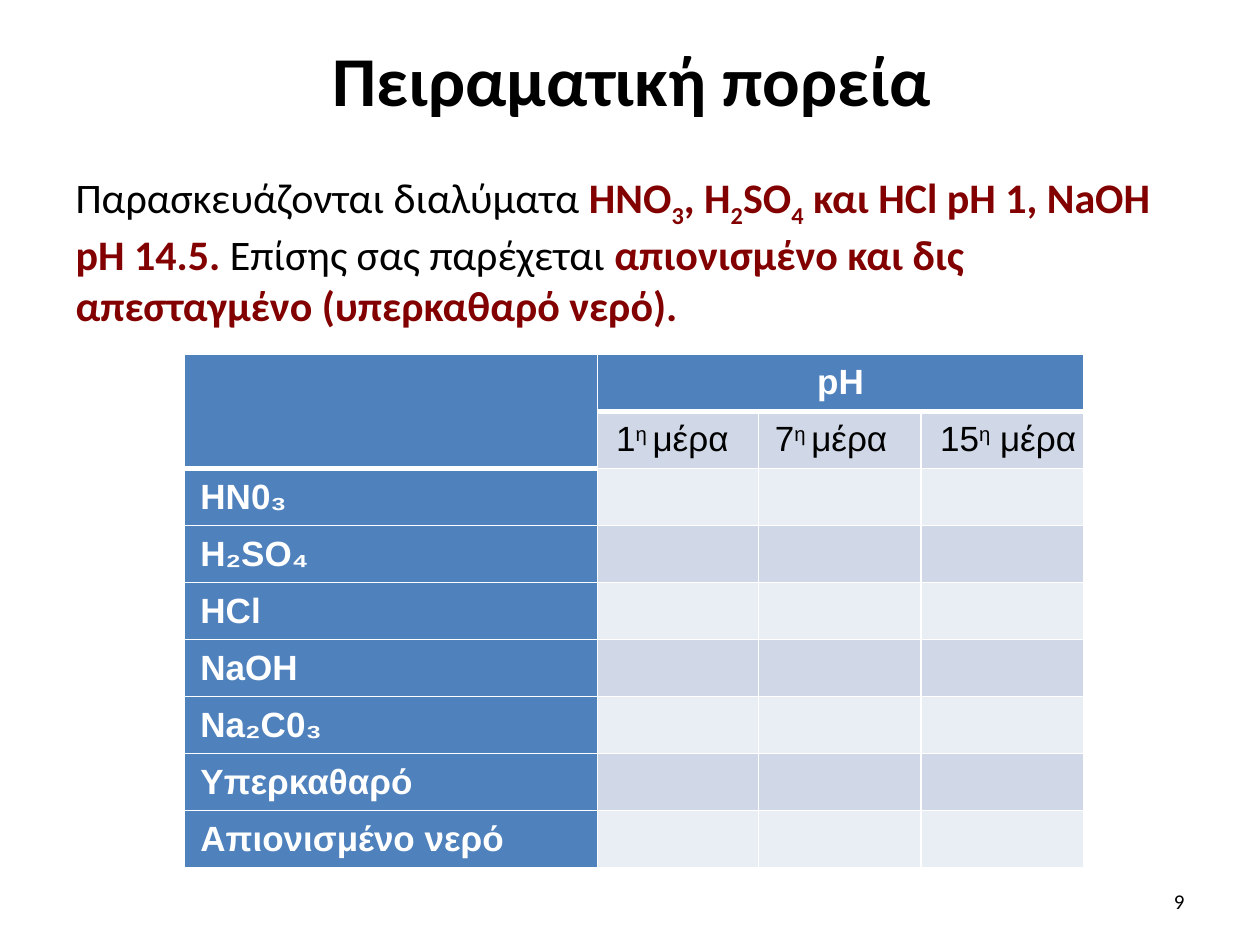
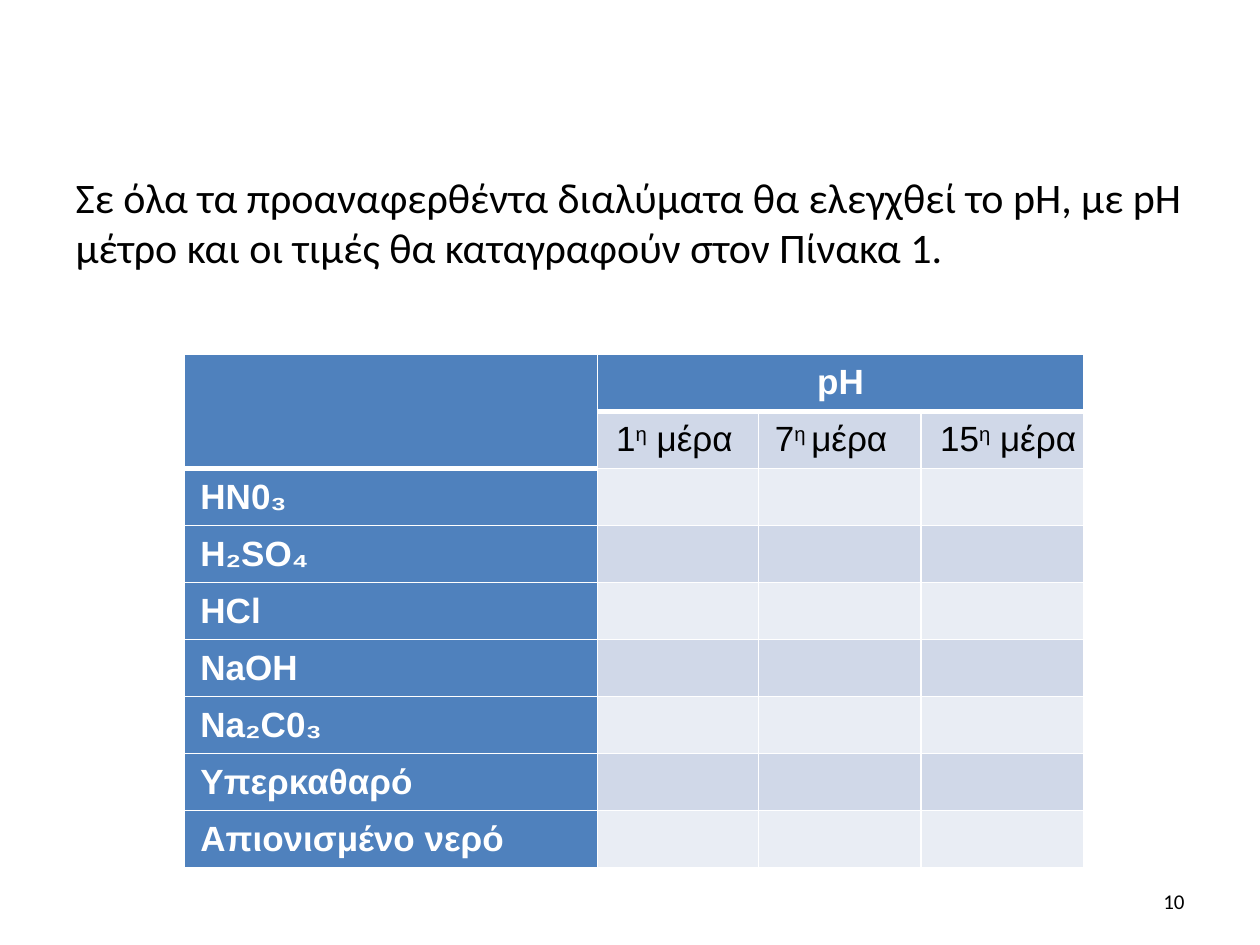
import lxml.etree
import pptx
import pptx.dml.color
import pptx.enum.text
import pptx.oxml.ns
import pptx.util

Cm = pptx.util.Cm
Pt = pptx.util.Pt
RGBColor = pptx.dml.color.RGBColor
ALIGN = pptx.enum.text.PP_ALIGN
ANCHOR = pptx.enum.text.MSO_ANCHOR
qn = pptx.oxml.ns.qn

BLACK = RGBColor(0x00, 0x00, 0x00)
WHITE = RGBColor(0xFF, 0xFF, 0xFF)
MAROON = RGBColor(0x82, 0x00, 0x00)
HEADER_BLUE = RGBColor(0x4F, 0x81, 0xBD)
BAND_DARK = RGBColor(0xD0, 0xD8, 0xE8)
BAND_LIGHT = RGBColor(0xE9, 0xED, 0xF4)

TITLE_BOX = (Cm(1.3), Cm(0.33), Cm(22.86), Cm(2.51))
TABLE_BOX = (Cm(3.71), Cm(7.14), Cm(18.14), Cm(10.35))
NUMBER_BOX = (Cm(18.21), Cm(17.65), Cm(5.92), Cm(1.02))

SAMPLES = ["ΗΝ0₃", "H₂SO₄", "HCl", "NaOH", "Na₂C0₃", "Υπερκαθαρό", "Απιονισμένο νερό"]
STRONG = {"bold": True, "color": MAROON}
SUBSCRIPT = {**STRONG, "baseline": -25}
SOLUTIONS = [
    ("Παρασκευάζονται διαλύματα ", {}),
    ("HNO", STRONG), ("3", SUBSCRIPT),
    (", H", STRONG), ("2", SUBSCRIPT),
    ("SO", STRONG), ("4", SUBSCRIPT),
    (" και HCl pH 1, ΝaΟΗ pH 14.5. ", STRONG),
    ("Επίσης σας παρέχεται ", {}),
    ("απιονισμένο και δις απεσταγμένο (υπερκαθαρό νερό).", STRONG),
]
MEASUREMENT = [(
    "Σε όλα τα προαναφερθέντα διαλύματα θα ελεγχθεί το pH, με pH μέτρο "
    "και οι τιμές θα καταγραφούν στον Πίνακα 1.", {})]


def add_run(paragraph, text, size=24, font="Calibri", color=BLACK, bold=False, baseline=0):
    """Append one formatted run to a paragraph."""
    run = paragraph.add_run()
    run.text = text
    run.font.size = Pt(size)
    run.font.name = font
    run.font.color.rgb = color
    run.font.bold = bold
    if baseline:
        run.font._element.set("baseline", str(baseline * 1000))


def write(frame, parts, align=ALIGN.LEFT, anchor=ANCHOR.TOP, **style):
    """Fill a text frame with (text, overrides) parts in a common style."""
    frame.word_wrap = True
    frame.vertical_anchor = anchor
    paragraph = frame.paragraphs[0]
    paragraph.alignment = align
    for text, overrides in parts:
        add_run(paragraph, text, **{**style, **overrides})


def place(shape, box):
    """Move and size a shape to a box."""
    shape.left, shape.top, shape.width, shape.height = box


def add_title(slide, text, box):
    """Write the slide title, or drop its placeholder when there is none."""
    title = slide.shapes.title
    if not text:
        title.element.getparent().remove(title.element)
        return
    place(title, box)
    write(title.text_frame, [(text, {})], align=ALIGN.CENTER, anchor=ANCHOR.MIDDLE,
          size=40, bold=True)


def add_body(slide, parts, box):
    """Write the unbulleted introduction in the body placeholder."""
    body = slide.placeholders[1]
    place(body, box)
    frame = body.text_frame
    frame.auto_size = pptx.enum.text.MSO_AUTO_SIZE.NONE
    write(frame, parts)
    properties = frame.paragraphs[0]._p.get_or_add_pPr()
    properties.set("marL", "0")
    properties.set("indent", "0")
    lxml.etree.SubElement(properties, qn("a:buNone"))


def rule_width(row, column):
    """Return the width in points of the rule below a cell."""
    return 3 if row == 0 or (row, column) == (1, 0) else 1


def add_borders(cell, top, bottom):
    """Rule a cell in white, with given widths above and below."""
    properties = cell._tc.get_or_add_tcPr()
    sides = {"lnL": 1, "lnR": 1, "lnT": top, "lnB": bottom}
    for position, (side, width) in enumerate(sides.items()):
        line = lxml.etree.Element(qn(f"a:{side}"), w=str(Pt(width)))
        fill = lxml.etree.SubElement(line, qn("a:solidFill"))
        lxml.etree.SubElement(fill, qn("a:srgbClr"), val=str(WHITE))
        properties.insert(position, line)


def cell_fill(row, column):
    """Return the header colour or the band colour of a cell."""
    if row == 0 or column == 0:
        return HEADER_BLUE
    return BAND_DARK if row % 2 else BAND_LIGHT


def write_cell(cell, parts, indent=0.33, **style):
    """Write vertically centred text in a cell with tight margins."""
    cell.margin_left, cell.margin_right = Cm(indent), Cm(0.02)
    cell.margin_top = cell.margin_bottom = 0
    cell.vertical_anchor = ANCHOR.MIDDLE
    paragraph_style = {"size": 20, "font": "Arial", **style}
    write(cell.text_frame, parts, anchor=None, **paragraph_style)


def add_ph_table(slide, first_day, box):
    """Add the blank pH record of all samples on three days."""
    left, top, width, height = box
    row_count = len(SAMPLES) + 2
    table = slide.shapes.add_table(row_count, 4, left, top, width, height).table
    table.first_row = table.horz_banding = False
    for column, share in zip(table.columns, (8.33, 3.25, 3.28, 3.28)):
        column.width = Cm(share)
    for row in table.rows:
        row.height = height // row_count

    for row in range(row_count):
        for column in range(4):
            cell = table.cell(row, column)
            cell.fill.solid()
            cell.fill.fore_color.rgb = cell_fill(row, column)
            add_borders(cell, rule_width(row - 1, column), rule_width(row, column))
    table.cell(0, 0).merge(table.cell(1, 0))
    table.cell(0, 1).merge(table.cell(0, 3))

    header = {"color": WHITE, "bold": True}
    write_cell(table.cell(0, 1), [("pΗ", {})], indent=0.02, align=ALIGN.CENTER, **header)
    days = [(*first_day, 0.38), ("1η", "", 0)][:1]
    days += [("7", "η ", "μέρα", 0.33), ("15", "η", " μέρα", 0.38)]
    for column, (number, ordinal, word, indent) in enumerate(days, 1):
        parts = [(number, {}), (ordinal, {"baseline": 30}), (word, {})]
        write_cell(table.cell(1, column), parts, indent=indent)
    for row, sample in enumerate(SAMPLES, 2):
        write_cell(table.cell(row, 0), [(sample, {})], **header)


def add_number(slide, number, box):
    """Add the page number at the lower right."""
    frame = slide.shapes.add_textbox(*box).text_frame
    write(frame, [(str(number), {})], align=ALIGN.RIGHT, anchor=ANCHOR.MIDDLE, size=12)


def add_record_slide(deck, number, title, body, body_box, first_day):
    """Add a slide with an introduction above the pH record."""
    slide = deck.slides.add_slide(deck.slide_layouts[1])
    add_title(slide, title, TITLE_BOX)
    add_body(slide, body, body_box)
    add_ph_table(slide, first_day, TABLE_BOX)
    add_number(slide, number, NUMBER_BOX)


def main():
    """Build and save the two slides."""
    deck = pptx.Presentation()
    deck.slide_width, deck.slide_height = Cm(25.4), Cm(19.05)
    add_record_slide(deck, 9, "Πειραματική πορεία", SOLUTIONS,
                     (Cm(1.27), Cm(3.33), Cm(22.86), Cm(14)), ("1", "η ", "μέρα"))
    add_record_slide(deck, 10, None, MEASUREMENT,
                     (Cm(1.27), Cm(3.33), Cm(23.04), Cm(3.4)), ("1", "η", " μέρα"))
    deck.save("out.pptx")


if __name__ == "__main__":
    main()
